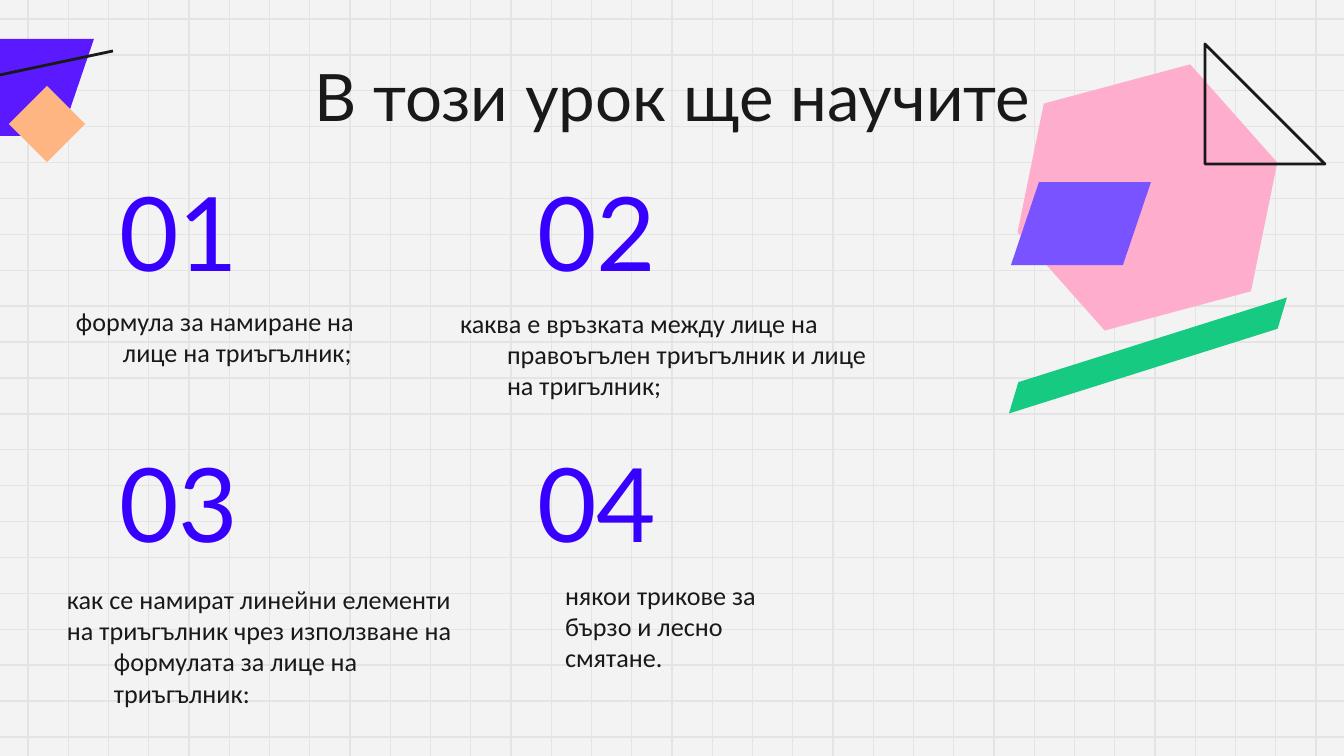
from lxml import etree
from pptx import Presentation
from pptx.dml.color import RGBColor
from pptx.enum.shapes import MSO_CONNECTOR, MSO_SHAPE
from pptx.enum.text import MSO_ANCHOR, MSO_AUTO_SIZE, PP_ALIGN
from pptx.oxml.ns import qn
from pptx.util import Pt

WIDE, HIGH = 1344, 756
SCALE = 9144000 / WIDE

PAPER = RGBColor(0xF3, 0xF3, 0xF3)
GRID = RGBColor(0xE4, 0xE4, 0xE4)
INK = RGBColor(0x19, 0x19, 0x19)
BLUE = RGBColor(0x37, 0x00, 0xFE)
VIOLET = RGBColor(0x5A, 0x19, 0xFF)
LILAC = RGBColor(0x78, 0x53, 0xFF)
PEACH = RGBColor(0xFE, 0xB5, 0x81)
PINK = RGBColor(0xFF, 0xAD, 0xCC)
GREEN = RGBColor(0x16, 0xCA, 0x81)

LINE = MSO_CONNECTOR.STRAIGHT
SLANT = MSO_SHAPE.FLOWCHART_DATA
RECT = MSO_SHAPE.RECTANGLE
HEXAGON = MSO_SHAPE.HEXAGON
CORNER = MSO_SHAPE.RIGHT_TRIANGLE
STRIP = MSO_SHAPE.PARALLELOGRAM
TOP, MIDDLE = MSO_ANCHOR.TOP, MSO_ANCHOR.MIDDLE
CENTER = PP_ALIGN.CENTER
NO_FIT = MSO_AUTO_SIZE.NONE

TITLE = "В този урок ще научите"
# caption box, hanging indent, paragraphs
TOPICS = [
    ((43, 292, 378, 108), True, ["формула за намиране на лице на триъгълник;"]),
    ((427, 294, 457, 108), True,
     ["каква е връзката между лице на правоъгълен триъгълник и лице на тригълник;"]),
    ((34, 570, 458, 108), True,
     ["как се намират линейни елементи",
      "на триъгълник чрез използване на формулата за лице на триъгълник:"]),
    ((552, 566, 266, 108), False, ["някои трикове за бързо и лесно смятане."]),
]
COLS, ROWS = (106, 524), (187, 458)

# kind, box, turn, fill, first adjustment
LEFT_ART = [
    (SLANT, (-71, 39, 165, 97), 0, VIOLET, None),
    (RECT, (20, 97, 54, 54), 315, PEACH, None),
]
RIGHT_ART = [
    (HEXAGON, (1013, 80, 269, 235), 345, PINK, 0.25),
    (CORNER, (1205, 44, 120, 120), 0, None, None),
    (STRIP, (998, 342, 300, 27), 342.5, GREEN, 0.68),
    (SLANT, (1011, 182, 140, 83), 0, LILAC, None),
]


def px(num):
    return round(num * SCALE)


def add_line(ends, color, width):
    line = slide.shapes.add_connector(LINE, *map(px, ends))
    line.line.color.rgb = color
    line.line.width = Pt(width)
    etree.SubElement(line._element.spPr, qn("a:effectLst"))


def add_art(kind, box, turn, fill, adjust):
    art = slide.shapes.add_shape(kind, *map(px, box))
    art.shadow.inherit = False
    art.rotation = turn
    if adjust is not None:
        art.adjustments[0] = adjust
    if fill is None:
        art.fill.background()
        art.line.color.rgb = INK
        art.line.width = Pt(1.5)
    else:
        art.fill.solid()
        art.fill.fore_color.rgb = fill
        art.line.fill.background()


def set_text(shape, texts, size, font, color, anchor, inset=13, align=None, hang=False):
    frame = shape.text_frame
    frame.word_wrap = True
    frame.auto_size = NO_FIT
    frame.vertical_anchor = anchor
    frame.margin_left = frame.margin_right = px(inset)
    frame.margin_top = frame.margin_bottom = px(inset)
    for i, text in enumerate(texts):
        para = frame.add_paragraph() if i else frame.paragraphs[0]
        if align is not None:
            para.alignment = align
        if hang:
            props = para._p.get_or_add_pPr()
            props.set("marL", str(px(67)))
            props.set("indent", str(px(-47)))
        run = para.add_run()
        run.text = text
        run.font.size = Pt(size)
        run.font.name = font
        run.font.color.rgb = color


def add_text(box, *args, **opts):
    set_text(slide.shapes.add_textbox(*map(px, box)), *args, **opts)


deck = Presentation()
deck.slide_width, deck.slide_height = px(WIDE), px(HIGH)
slide = deck.slides.add_slide(deck.slide_layouts[5])
slide.background.fill.solid()
slide.background.fill.fore_color.rgb = PAPER

for i in range(21):
    y = 19 + i * 718 / 20
    add_line((1355, y, -11, y), GRID, 0.75)
for i in range(33):
    x = 28 + i * 1288 / 32
    add_line((x, -1, x, 758), GRID, 0.75)

for art in LEFT_ART:
    add_art(*art)
add_line((-90, 94, 113, 51), INK, 1.5)

title = slide.shapes.title
title.left, title.top, title.width, title.height = map(px, (106, 62, 1133, 67))
set_text(title, [TITLE], 35, "Lato", INK, MIDDLE, inset=0, align=CENTER)
slide.shapes._spTree.append(title._element)  # bring in front of the grid

for i, (box, hang, texts) in enumerate(TOPICS):
    spot = (COLS[i % 2], ROWS[i // 2], 175, 87)
    add_text(spot, [f"{i + 1:02}"], 55, "Lato", BLUE, MIDDLE)
    add_text(box, texts, 14, "Calibri", INK, TOP, hang=hang)

for art in RIGHT_ART:
    add_art(*art)

deck.save("out.pptx")
